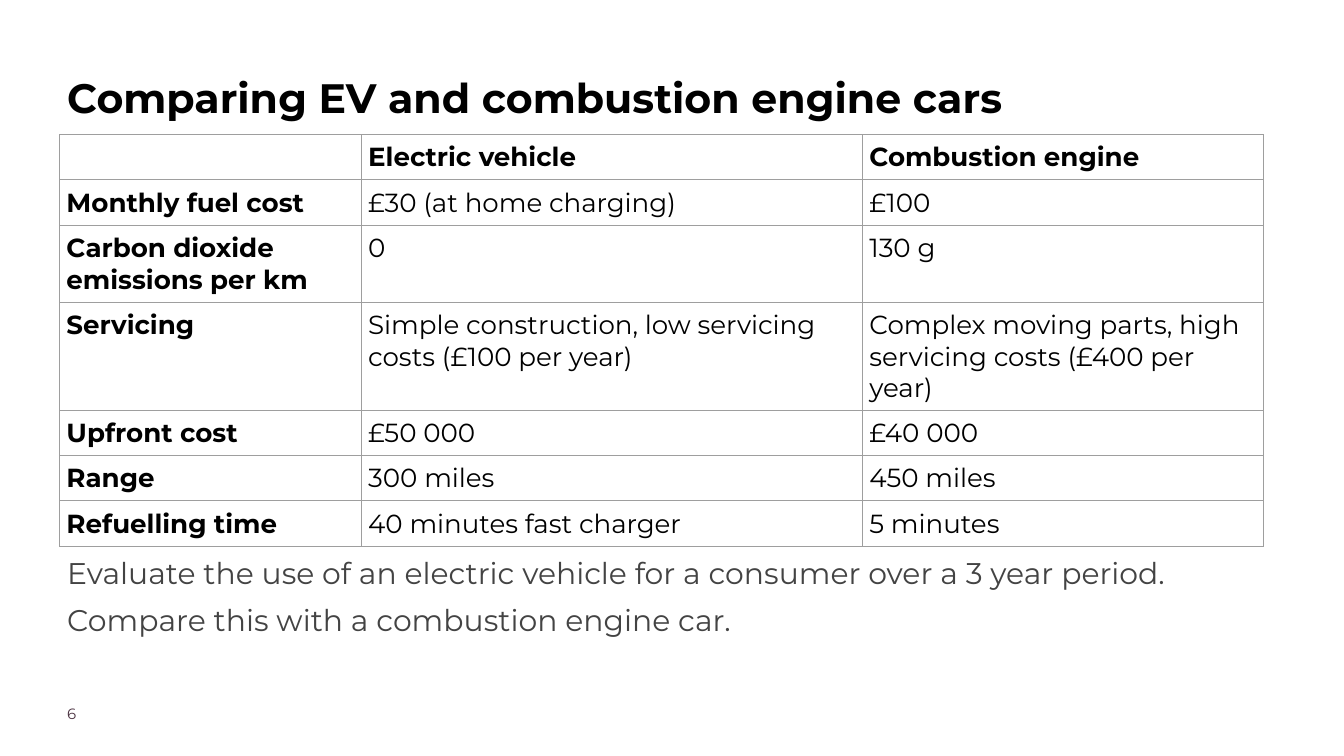
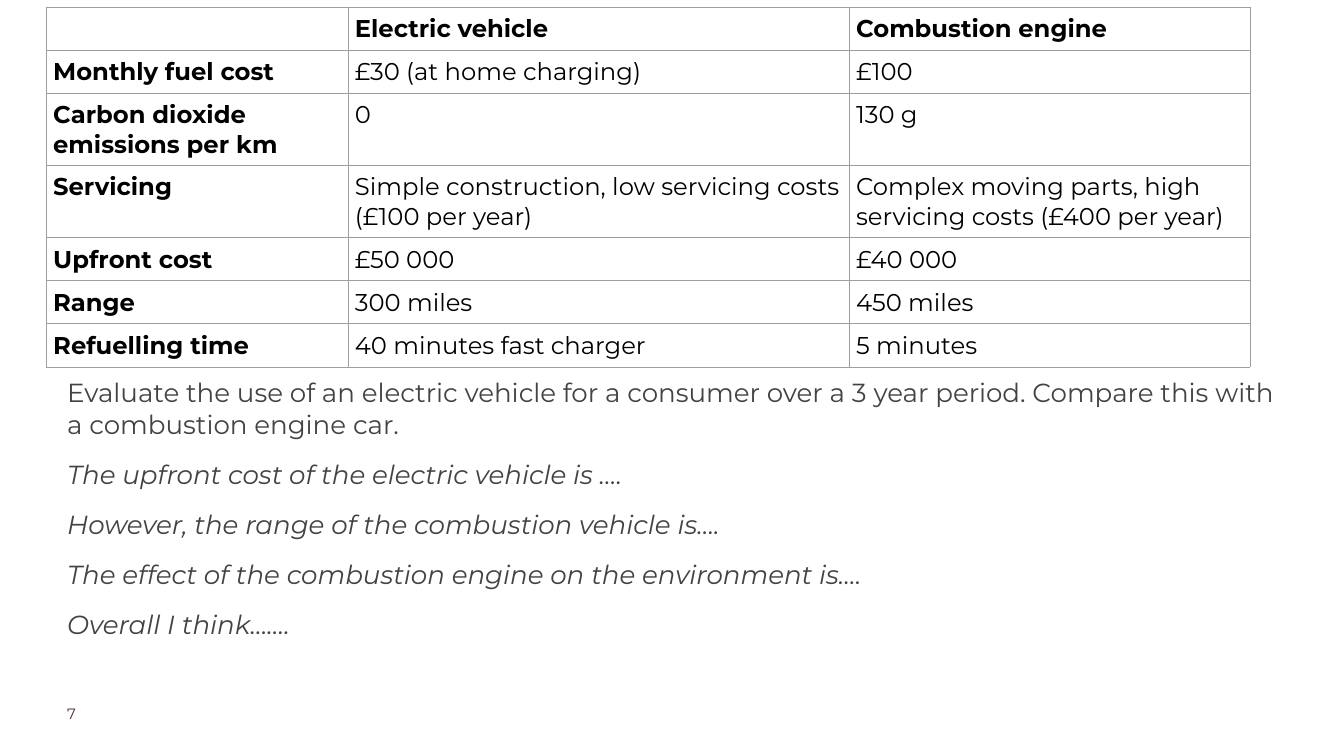
import dataclasses

import pptx
import pptx.dml.color
import pptx.enum.text
import pptx.oxml
import pptx.oxml.ns
import pptx.util

PX = 9525  # EMU per px on a 1920 x 1080 slide


@dataclasses.dataclass(frozen=True)
class Theme:
    font: str = "Montserrat"
    black: str = "000000"
    grey: str = "434343"
    plum: str = "4B3241"
    border: str = "9E9E9E"
    border_width: float = 0.75
    title_size: int = 44
    number_size: int = 16
    margin: int = 96
    body_width: int = 1727
    gap: int = 20


THEME = Theme()

COLUMNS = [431, 716, 573]
ROW_HEIGHT = 40
CELL_INSET = 10
ROWS = [
    ("", "Electric vehicle", "Combustion engine"),
    ("Monthly fuel cost", "£30 (at home charging)", "£100"),
    ("Carbon dioxide emissions per km", "0", "130 g"),
    ("Servicing", "Simple construction, low servicing costs (£100 per year)",
     "Complex moving parts, high servicing costs (£400 per year)"),
    ("Upfront cost", "£50 000", "£40 000"),
    ("Range", "300 miles", "450 miles"),
    ("Refuelling time", "40 minutes fast charger", "5 minutes"),
]
TASK = ("Evaluate the use of an electric vehicle for a consumer over a 3 year period. "
        "Compare this with a combustion engine car.")
STARTERS = [
    "The upfront cost of the electric vehicle is ….",
    "However, the range of the combustion vehicle is….",
    "The effect of the combustion engine on the environment is….",
    "Overall I think…….",
]


def px(n):
    return pptx.util.Emu(n * PX)


def style(p, size, color, bold=False, italic=False):
    for r in p.runs:
        r.font.name = THEME.font
        r.font.size = pptx.util.Pt(size)
        r.font.color.rgb = pptx.dml.color.RGBColor.from_string(color)
        r.font.bold = bold
        r.font.italic = italic


# Text
def add_text(slide, text, box, size, color, bold=False, spacing=None):
    tf = slide.shapes.add_textbox(*map(px, box)).text_frame
    tf.word_wrap = True
    tf.vertical_anchor = pptx.enum.text.MSO_ANCHOR.TOP
    tf.margin_left = tf.margin_top = tf.margin_right = tf.margin_bottom = 0
    p = tf.paragraphs[0]
    p.text = text
    if spacing:
        p.line_spacing = spacing
    style(p, size, color, bold)
    return tf


def add_title(slide, text):
    add_text(slide, text, (THEME.margin, 93, 1386, 171),
             THEME.title_size, THEME.black, bold=True, spacing=1.15)


def add_body(slide, top, height, size, spacing=None):
    return add_text(slide, TASK, (THEME.margin, top, THEME.body_width, height),
                    size, THEME.grey, spacing=spacing)


def add_starters(tf, size):
    for text in STARTERS:
        p = tf.add_paragraph()
        p.text = text
        p.space_before = pptx.util.Pt(THEME.gap)
        style(p, size, THEME.grey, italic=True)


def add_number(slide, number):
    add_text(slide, str(number), (THEME.margin, 1006, 151, 37),
             THEME.number_size, THEME.plum)


# Table
def set_borders(cell):
    tcPr = cell._tc.get_or_add_tcPr()
    width = pptx.util.Pt(THEME.border_width)
    for side in "LRTB":
        tcPr.append(pptx.oxml.parse_xml(
            f'<a:ln{side} {pptx.oxml.ns.nsdecls("a")} w="{width}"><a:solidFill>'
            f'<a:srgbClr val="{THEME.border}"/></a:solidFill></a:ln{side}>'))


def add_comparison(slide, left, top, size):
    frame = slide.shapes.add_table(
        len(ROWS), len(COLUMNS), px(left), px(top),
        px(sum(COLUMNS)), px(ROW_HEIGHT * len(ROWS)))
    table = frame.table
    table.first_row = table.horz_banding = False
    for column, width in zip(table.columns, COLUMNS):
        column.width = px(width)
    for i, texts in enumerate(ROWS):
        table.rows[i].height = px(ROW_HEIGHT)
        for j, text in enumerate(texts):
            cell = table.cell(i, j)
            set_borders(cell)
            cell.fill.background()
            cell.margin_left = cell.margin_right = px(CELL_INSET)
            cell.margin_top = cell.margin_bottom = px(CELL_INSET)
            if text:
                cell.text_frame.text = text
                style(cell.text_frame.paragraphs[0], size, THEME.black,
                      bold=i == 0 or j == 0)


def main():
    prs = pptx.Presentation()
    prs.slide_width, prs.slide_height = px(1920), px(1080)
    blank = prs.slide_layouts[6]

    # Comparison and task
    s = prs.slides.add_slide(blank)
    add_title(s, "Comparing EV and combustion engine cars")
    tf = add_body(s, top=777, height=152, size=32, spacing=1.3)
    tf.paragraphs[0].space_after = pptx.util.Pt(THEME.gap)
    add_number(s, 6)
    add_comparison(s, left=85, top=192, size=28)

    # Task with sentence starters
    s = prs.slides.add_slide(blank)
    tf = add_body(s, top=538, height=315, size=28)
    add_starters(tf, size=28)
    add_number(s, 7)
    add_comparison(s, left=66, top=10, size=26)

    prs.save("out.pptx")


if __name__ == "__main__":
    main()
